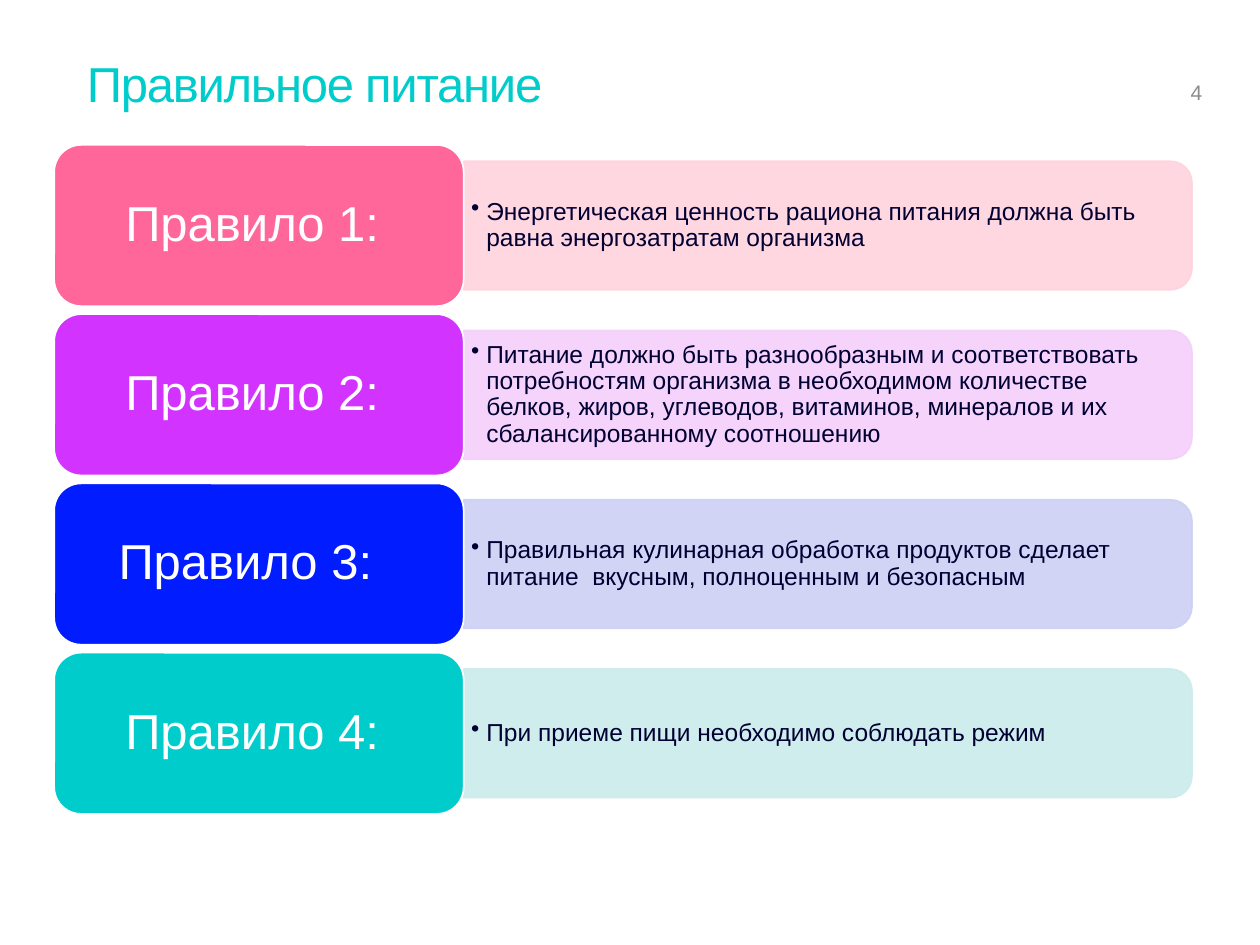
from lxml import etree
from pptx import Presentation
from pptx.dml.color import RGBColor
from pptx.enum import shapes, text
from pptx.oxml import ns
from pptx.util import Inches, Pt

TITLE = "Правильное питание"
PAGE = "4"
TEAL = RGBColor(0x00, 0xCC, 0xCC)
GREY = RGBColor(0x8C, 0x8C, 0x90)
NAVY = RGBColor(0x00, 0x00, 0x33)
WHITE = RGBColor(0xFF, 0xFF, 0xFF)

# label, explanation, label colour, panel colour
RULES = [
    ("Правило 1: ",
     "Энергетическая ценность рациона питания должна быть равна энергозатратам организма",
     RGBColor(0xFF, 0x66, 0x99), RGBColor(0xFF, 0xD3, 0xDE)),
    ("Правило 2: ",
     "Питание должно быть разнообразным и соответствовать потребностям организма "
     "в необходимом количестве белков, жиров, углеводов, витаминов, минералов "
     "и их сбалансированному соотношению",
     RGBColor(0xD2, 0x33, 0xFF), RGBColor(0xF4, 0xCF, 0xFA)),
    ("Правило 3:  ",
     "Правильная кулинарная обработка продуктов сделает питание  вкусным, "
     "полноценным и безопасным",
     RGBColor(0x00, 0x1C, 0xFF), RGBColor(0xCC, 0xD0, 0xF4)),
    ("Правило 4: ",
     "При приеме пищи необходимо соблюдать режим",
     TEAL, RGBColor(0xCB, 0xEC, 0xEC)),
]

LABEL_X, LABEL_W, LABEL_H = 0.43, 3.25, 1.28
PANEL_X, PANEL_W, PANEL_H = LABEL_X + LABEL_W, 5.78, 1.02
TEXT_W, TEXT_H = 5.73, 0.92
FIRST_TOP, LAST_TOP = 1.15, 5.18
PITCH = (LAST_TOP - FIRST_TOP) / (len(RULES) - 1)


def write(sp, words, size, color, insets, anchor, align=text.PP_ALIGN.LEFT,
          spacing=1.0, bullet=False):
    """Fill a shape with one paragraph; insets are horizontal, vertical."""
    tf = sp.text_frame
    dx, dy = map(Inches, insets)
    frame = dict(word_wrap=True, vertical_anchor=anchor, margin_left=dx,
                 margin_right=dx, margin_top=dy, margin_bottom=dy)
    for name, value in frame.items():
        setattr(tf, name, value)
    p = tf.paragraphs[0]
    p.alignment, p.line_spacing = align, spacing
    if bullet:
        pPr = p._p.get_or_add_pPr()
        pPr.set("marL", str(Inches(0.12)))
        pPr.set("indent", str(-Inches(0.12)))
        etree.SubElement(pPr, ns.qn("a:buChar")).set("char", "•")
    r = p.add_run()
    r.text = words
    for name, value in dict(name="Arial", size=Pt(size)).items():
        setattr(r.font, name, value)
    r.font.color.rgb = color
    return r


def add_box(slide, kind, at, fill, line):
    sp = slide.shapes.add_shape(kind, *map(Inches, at))
    sp.shadow.inherit = False
    sp.fill.solid()
    sp.fill.fore_color.rgb = fill
    sp.line.color.rgb = line
    sp.line.width = Pt(1)
    return sp


def add_text(slide, at, *args, **kwargs):
    return write(slide.shapes.add_textbox(*map(Inches, at)), *args, **kwargs)


def add_rule(slide, top, label, explanation, color, tint):
    middle = top + LABEL_H / 2
    # The panel is drawn upright, then turned so its round corners face right.
    panel = add_box(slide, shapes.MSO_SHAPE.ROUND_2_SAME_RECTANGLE,
                    (PANEL_X + (PANEL_W - PANEL_H) / 2, middle - PANEL_W / 2,
                     PANEL_H, PANEL_W), tint, tint)
    panel.rotation = 90
    for clr in panel._element.spPr.iter(ns.qn("a:srgbClr")):
        etree.SubElement(clr, ns.qn("a:alpha")).set("val", "90000")
    add_text(slide, (PANEL_X, middle - TEXT_H / 2, TEXT_W, TEXT_H), explanation,
             14, NAVY, (0.06, 0.03), text.MSO_ANCHOR.MIDDLE, spacing=0.9, bullet=True)
    box = add_box(slide, shapes.MSO_SHAPE.ROUNDED_RECTANGLE,
                  (LABEL_X, top, LABEL_W, LABEL_H), color, WHITE)
    write(box, label, 28, WHITE, (0.12, 0.06), text.MSO_ANCHOR.MIDDLE,
          align=text.PP_ALIGN.CENTER, spacing=0.9)


def main():
    prs = Presentation()
    prs.slide_width, prs.slide_height = Inches(10), Inches(7.5)
    slide = prs.slides.add_slide(prs.slide_layouts[6])
    title = add_text(slide, (0.69, 0.4, 8.62, 1.03), TITLE, 28, TEAL, (0, 0.05),
                     text.MSO_ANCHOR.TOP, spacing=Pt(32))
    title._r.get_or_add_rPr().set("spc", "-70")
    add_text(slide, (9.45, 0.4, 0.38, 0.47), PAGE, 12, GREY, (0, 0.04),
             text.MSO_ANCHOR.BOTTOM)
    for i, rule in enumerate(RULES):
        add_rule(slide, FIRST_TOP + i * PITCH, *rule)
    prs.save("out.pptx")


if __name__ == "__main__":
    main()
